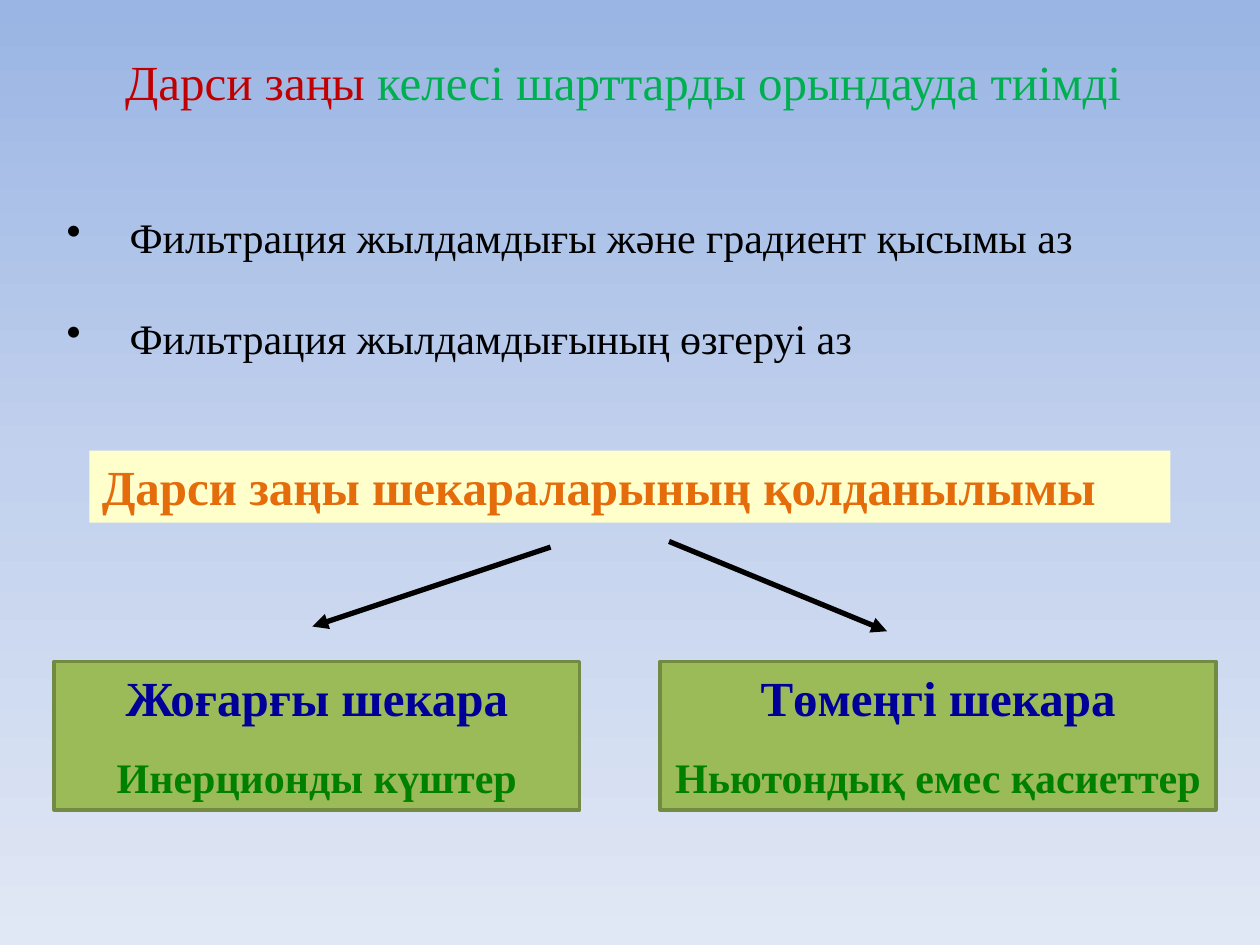
import copy

import pptx
import pptx.dml.color
import pptx.enum.shapes
import pptx.enum.text
import pptx.oxml
import pptx.oxml.ns
import pptx.util

RGBColor = pptx.dml.color.RGBColor
SKY = [RGBColor(0x9A, 0xB5, 0xE4), RGBColor(0xC2, 0xD1, 0xED), RGBColor(0xE1, 0xE8, 0xF5)]
RED = RGBColor(0xC0, 0x00, 0x00)
BRIGHT_GREEN = RGBColor(0x00, 0xB0, 0x50)
BLACK = RGBColor(0x00, 0x00, 0x00)
CREAM = RGBColor(0xFF, 0xFF, 0xCC)
ORANGE = RGBColor(0xE4, 0x6C, 0x0A)
OLIVE = RGBColor(0x9B, 0xBB, 0x59)
DARK_OLIVE = RGBColor(0x73, 0x8A, 0x42)
NAVY = RGBColor(0x00, 0x00, 0x99)
GREEN = RGBColor(0x00, 0x80, 0x00)

LEFT = pptx.enum.text.PP_ALIGN.LEFT
CENTER = pptx.enum.text.PP_ALIGN.CENTER

deck = pptx.Presentation()
deck.slide_width = pptx.util.Inches(10)
deck.slide_height = pptx.util.Inches(7.5)
page = deck.slides.add_slide(deck.slide_layouts[6])


def grid(*lengths):
    """Turn alternating x and y percentages of the slide into lengths."""
    sides = (deck.slide_width, deck.slide_height)
    return [round(share * sides[i % 2] / 100) for i, share in enumerate(lengths)]


def write(frame, number, spans, size, bold=False, **layout):
    """Fill paragraph `number` with (text, colour) spans."""
    para = frame.paragraphs[0] if number == 0 else frame.add_paragraph()
    for name, value in layout.items():
        setattr(para, name, value)
    for text, color in spans:
        span = para.add_run()
        span.text = text
        span.font.color.rgb = color
        look = {"name": "Times New Roman", "size": pptx.util.Pt(size), "bold": bold}
        for name, value in look.items():
            setattr(span.font, name, value)
    return para


# Background: three-stop gradient from top to bottom
fill = page.background.fill
fill.gradient()
fill.gradient_angle = 270
stop_list = page.element.xpath(".//a:gsLst")[0]
stop_list.append(copy.deepcopy(stop_list[-1]))
for stop, color, position in zip(fill.gradient_stops, SKY, (0, 0.5, 1)):
    stop.color.rgb = color
    stop.position = position

# Title and conditions
box = page.shapes.add_textbox(*grid(4.3, 4.8, 91.3, 34.5))
frame = box.text_frame
frame.word_wrap = True
title = write(frame, 0, [("Дарси заңы ", RED),
                         ("келесі шарттарды орындауда тиімді ", BRIGHT_GREEN)],
              28, alignment=CENTER)
title.space_after = pptx.util.Pt(29)
conditions = ["Фильтрация жылдамдығы және градиент қысымы аз",
              "Фильтрация жылдамдығының өзгеруі аз"]
for number, condition in enumerate(conditions, 1):
    para = write(frame, number, [(condition, BLACK)], 24, line_spacing=2.0)
    bullet = pptx.oxml.parse_xml(
        f'<a:buChar {pptx.oxml.ns.nsdecls("a")} char="•"/>')
    para._p.get_or_add_pPr().append(bullet)
for para in frame.paragraphs:
    properties = para._p.get_or_add_pPr()
    properties.set("marL", str(pptx.util.Inches(0.5)))
    properties.set("indent", str(pptx.util.Inches(-0.5)))

# Heading band and the two limits: place, fill, border, alignment, lines
panels = [
    ((7.1, 47.7, 85.8, 7.6), CREAM, None, LEFT,
     [("Дарси заңы шекараларының қолданылымы", ORANGE, 28)]),
    ((4.3, 70, 41.7, 15.7), OLIVE, DARK_OLIVE, CENTER,
     [("Жоғарғы шекара", NAVY, 28), ("Инерционды күштер", GREEN, 24)]),
    ((52.4, 70, 44.1, 15.7), OLIVE, DARK_OLIVE, CENTER,
     [("Төмеңгі шекара", NAVY, 28), ("Ньютондық емес қасиеттер", GREEN, 24)]),
]
for place, fill_color, border, alignment, lines in panels:
    panel = page.shapes.add_shape(pptx.enum.shapes.MSO_SHAPE.RECTANGLE, *grid(*place))
    panel.shadow.inherit = False
    panel.fill.solid()
    panel.fill.fore_color.rgb = fill_color
    if border is None:
        panel.line.fill.background()
    else:
        panel.line.color.rgb = border
        panel.line.width = pptx.util.Pt(2)
    frame = panel.text_frame
    frame.word_wrap = True
    frame.vertical_anchor = pptx.enum.text.MSO_ANCHOR.TOP
    for number, (text, color, size) in enumerate(lines):
        write(frame, number, [(text, color)], size, bold=True, alignment=alignment,
              space_before=pptx.util.Pt(14 * number))

# Arrows from the heading band towards the limits
for ends in [(43.7, 57.9, 24.8, 66.3), (53.1, 57.3, 70.4, 66.8)]:
    arrow = page.shapes.add_connector(
        pptx.enum.shapes.MSO_CONNECTOR.STRAIGHT, *grid(*ends))
    arrow.line.color.rgb = BLACK
    arrow.line.width = pptx.util.Pt(3)
    arrow.line._get_or_add_ln().append(pptx.oxml.parse_xml(
        f'<a:tailEnd {pptx.oxml.ns.nsdecls("a")} type="triangle"/>'))
    arrow._element.spPr.append(pptx.oxml.parse_xml(
        f'<a:effectLst {pptx.oxml.ns.nsdecls("a")}/>'))

deck.save("out.pptx")
